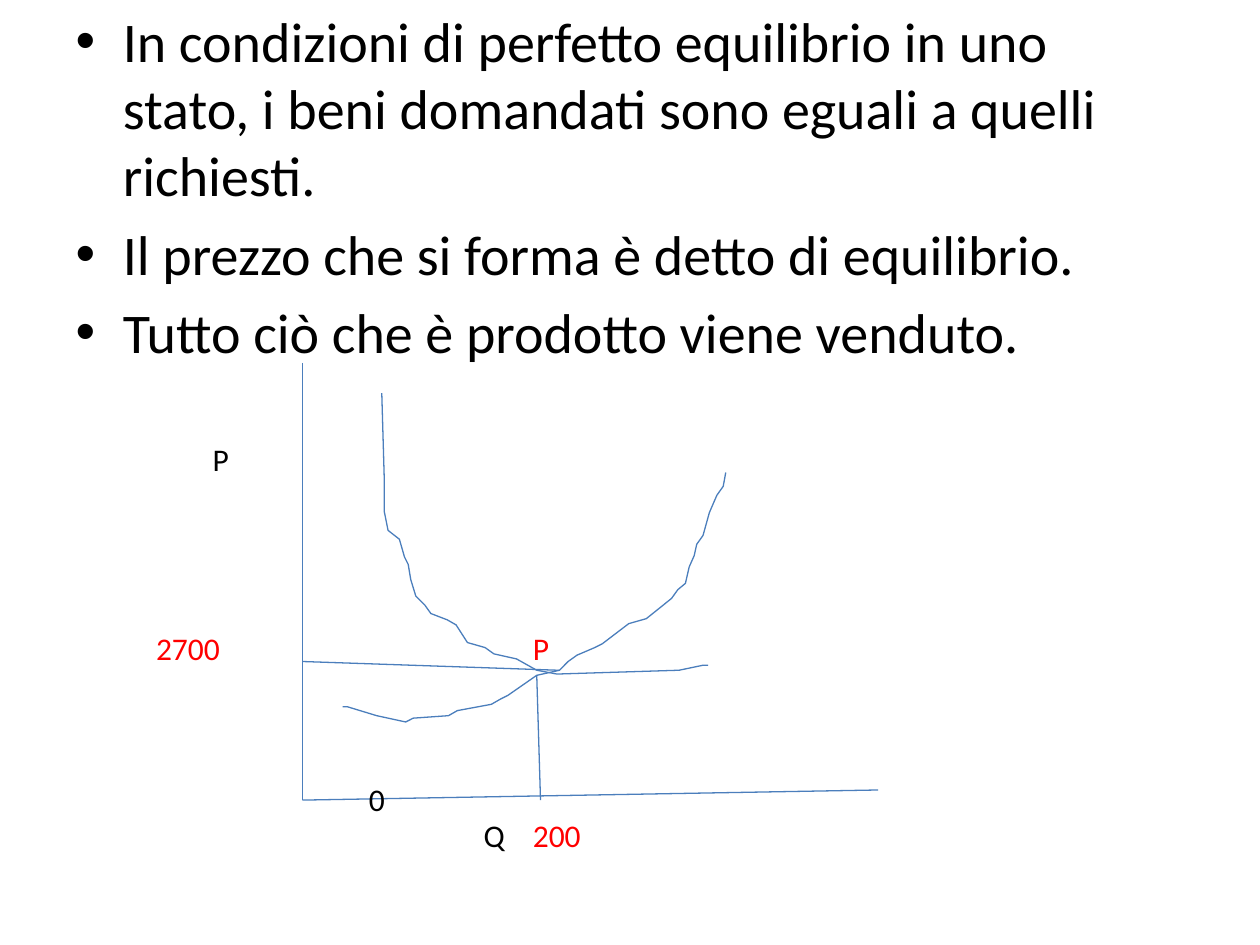
from pptx import Presentation
from pptx import util as u
from pptx.dml.color import RGBColor
from pptx.enum import shapes, text
from pptx.oxml.ns import qn
from lxml import etree

BLACK = RGBColor(0x00, 0x00, 0x00)
RED = RGBColor(0xFF, 0x00, 0x00)
BLUE = RGBColor(0x4B, 0x7E, 0xBC)
FONT = "Calibri"
W, H = 10, 7.5
LINE_PT = 21.6  # height of one line of 18 pt label text

BULLETS = [
    "In condizioni di perfetto equilibrio in uno stato, i beni domandati sono "
    "eguali a quelli richiesti.",
    "Il prezzo che si forma è detto di equilibrio.",
    "Tutto ciò che è prodotto viene venduto.",
]

# Chart geometry, in inches
ORIGIN, AXIS_TOP, AXIS_RIGHT = (2.4, 6.35), (2.4, 2.88), (6.97, 6.27)
AXES = [(AXIS_TOP, ORIGIN), (ORIGIN, AXIS_RIGHT)]
GUIDES = [
    ((4.44, 5.32), (2.4, 5.25)),    # equilibrium price
    ((4.26, 5.36), (4.29, 6.35)),   # equilibrium quantity
]
DEMAND = [
    (3.03, 3.12), (3.05, 3.8), (3.05, 4.06), (3.08, 4.21), (3.17, 4.28),
    (3.21, 4.42), (3.24, 4.48), (3.26, 4.6), (3.3, 4.73), (3.37, 4.8),
    (3.42, 4.87), (3.55, 4.92), (3.62, 4.96), (3.71, 5.1), (3.85, 5.14),
    (3.92, 5.19), (4.1, 5.23), (4.26, 5.32), (4.42, 5.35), (5.39, 5.32),
    (5.58, 5.28), (5.62, 5.28),
]
SUPPLY = [
    (5.76, 3.75), (5.74, 3.86), (5.69, 3.93), (5.66, 4.0), (5.63, 4.07),
    (5.58, 4.25), (5.53, 4.32), (5.51, 4.41), (5.47, 4.5), (5.44, 4.63),
    (5.38, 4.68), (5.33, 4.75), (5.13, 4.91), (4.99, 4.95), (4.78, 5.11),
    (4.72, 5.14), (4.58, 5.2), (4.51, 5.25), (4.44, 5.32), (4.26, 5.36),
    (4.03, 5.52), (3.97, 5.55), (3.9, 5.59), (3.63, 5.64), (3.56, 5.68),
    (3.28, 5.7), (3.22, 5.73), (2.99, 5.68), (2.76, 5.61), (2.72, 5.61),
]

# Label boxes: position, then lines of (indent, lines skipped, tab stop, runs)
LABELS = [
    ((1.14, 3.44, 3.94, 3.13), [
        (0.45, 0, None, [("P", BLACK)]),
        (0, 4, 2.99, [("2700\tP", RED)]),
        (1.69, 3, None, [("0", BLACK)]),
    ]),
    ((3.74, 6.43, 1.02, 0.4), [
        (0, 0, 0.39, [("Q\t", BLACK), ("200", RED)]),
    ]),
]


def add_run(p, words, size, color):
    r = p.add_run()
    r.text = words
    r.font.name, r.font.size = FONT, u.Pt(size)
    r.font.color.rgb = color


def style_line(sp):
    sp.line.color.rgb = BLUE
    sp.line.width = u.Pt(0.75)


def add_straight(s, start, end):
    cx = s.shapes.add_connector(
        shapes.MSO_CONNECTOR.STRAIGHT, *(u.Inches(v) for v in start + end))
    style_line(cx)
    etree.SubElement(cx._element.spPr, qn("a:effectLst"))


def add_curve(s, pts):
    pts = [(u.Inches(x), u.Inches(y)) for x, y in pts]
    fb = s.shapes.build_freeform(*pts[0])
    fb.add_line_segments(pts[1:], close=False)
    sp = fb.convert_to_shape()
    sp.fill.background()
    style_line(sp)
    sp.shadow.inherit = False


def add_label(s, box, lines):
    tf = s.shapes.add_textbox(*(u.Inches(v) for v in box)).text_frame
    tf.word_wrap = True
    for i, (indent, skipped, tab, runs) in enumerate(lines):
        p = tf.add_paragraph() if i else tf.paragraphs[0]
        pPr = p._p.get_or_add_pPr()
        pPr.set("marL", str(u.Inches(indent)))
        if skipped:
            p.space_before = u.Pt(skipped * LINE_PT)
        if tab:
            tabs = etree.SubElement(pPr, qn("a:tabLst"))
            etree.SubElement(tabs, qn("a:tab"), pos=str(u.Inches(tab)), algn="l")
        for words, color in runs:
            add_run(p, words, 18, color)


def main():
    prs = Presentation()
    prs.slide_width, prs.slide_height = u.Inches(W), u.Inches(H)
    s = prs.slides.add_slide(prs.slide_layouts[1])
    title = s.shapes.title._element
    title.getparent().remove(title)

    # Bulleted statements
    body = s.placeholders[1]
    body.left, body.top = u.Inches(W * 0.05), 0
    body.width, body.height = u.Inches(W * 0.9), u.Inches(H)
    tf = body.text_frame
    tf.vertical_anchor = text.MSO_ANCHOR.TOP
    for i, words in enumerate(BULLETS):
        p = tf.add_paragraph() if i else tf.paragraphs[0]
        add_run(p, words, 32, BLACK)

    # Axes, curves and equilibrium guides
    for start, end in AXES:
        add_straight(s, start, end)
    for pts in (DEMAND, SUPPLY):
        add_curve(s, pts)
    for start, end in GUIDES:
        add_straight(s, start, end)

    # Labels
    for box, lines in LABELS:
        add_label(s, box, lines)
    prs.save("out.pptx")


if __name__ == "__main__":
    main()
